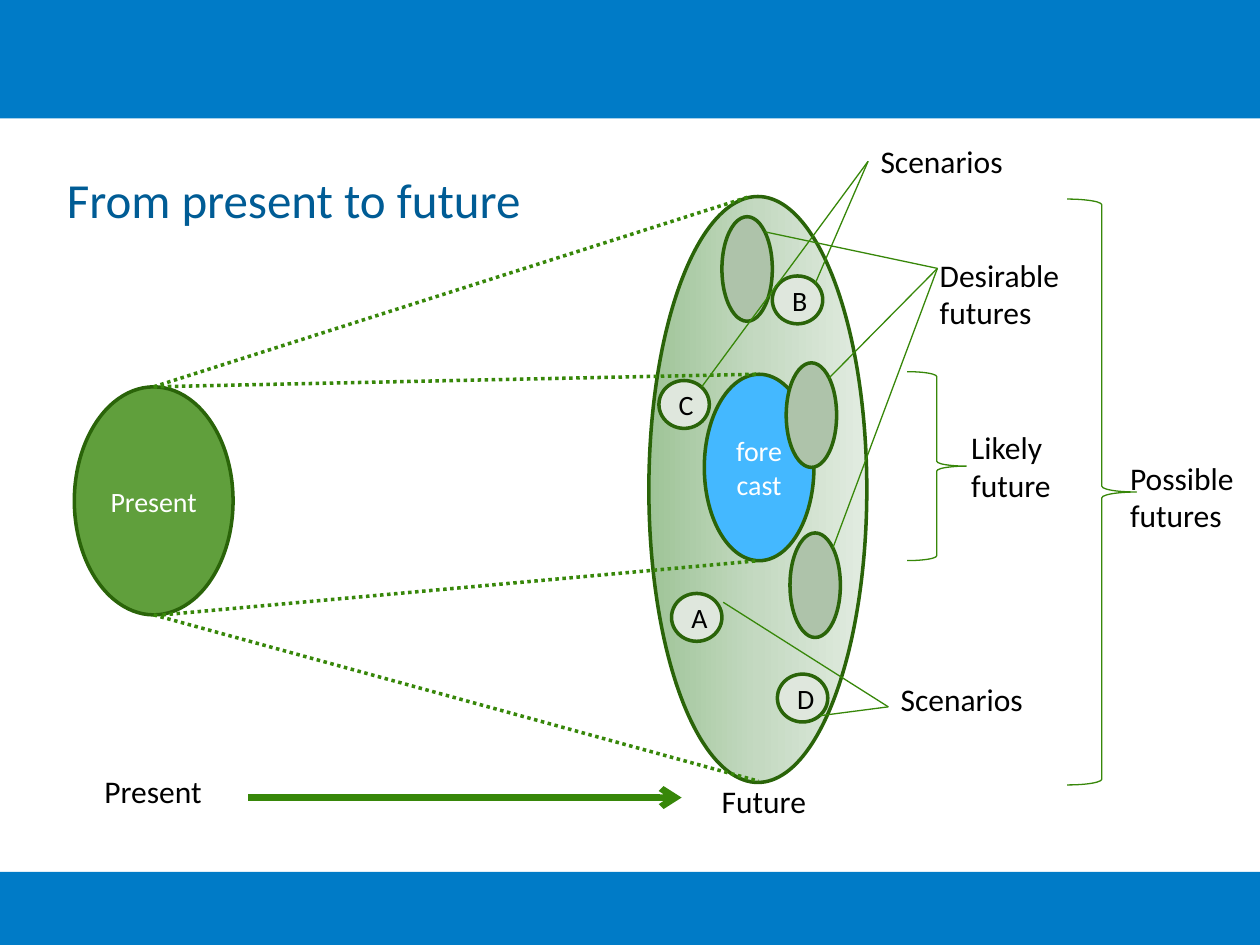
from copy import deepcopy
from dataclasses import dataclass

from lxml.etree import SubElement
from pptx import Presentation
from pptx.dml.color import RGBColor
from pptx.enum.dml import MSO_LINE
from pptx.enum.shapes import MSO_CONNECTOR, MSO_SHAPE
from pptx.enum.text import MSO_ANCHOR, PP_ALIGN
from pptx.oxml.ns import qn
from pptx.util import Inches, Pt


@dataclass(frozen=True)
class Theme:
    font: str = "Calibri"
    band: str = "007BC7"
    title: str = "005C95"
    text: str = "000000"
    white: str = "FFFFFF"
    line: str = "378709"
    outline: str = "2A6409"
    present: str = "39870C"
    forecast: str = "44B8FF"
    desirable: str = "AEC3AA"
    scenario: str = "DFE7DD"
    future: tuple = ("9EC497", "C4D9C1", "E2ECE1")
    title_size: int = 28
    label_size: int = 18
    shape_size: int = 16
    outline_width: float = 2
    thin: float = 0.75
    thick: float = 3.75


THEME = Theme()


@dataclass(frozen=True)
class Box:
    left: float
    top: float
    width: float
    height: float

    def point(self, x, y):
        return Inches(self.left + x), Inches(self.top + y)

    def area(self, x, y, width, height):
        return *self.point(x, y), Inches(width), Inches(height)


def rgb(value):
    return RGBColor.from_string(value)


def set_values(target, values):
    for name, value in values.items():
        setattr(target, name, value)


def write(frame, lines, size, color, align=PP_ALIGN.LEFT, **frame_values):
    set_values(frame, {"word_wrap": True, **frame_values})
    for index, line in enumerate(lines):
        paragraph = frame.paragraphs[0] if index == 0 else frame.add_paragraph()
        paragraph.text = line
        paragraph.alignment = align
        set_values(paragraph.font, {"name": THEME.font, "size": Pt(size)})
        paragraph.font.color.rgb = rgb(color)


def add_label(slide, area, *lines):
    write(slide.shapes.add_textbox(*area).text_frame, lines,
          THEME.label_size, THEME.text)


def add_shape(slide, kind, area, fill=None, line=None, width=THEME.outline_width):
    shape = slide.shapes.add_shape(kind, *area)
    shape.shadow.inherit = False
    if fill:
        shape.fill.solid()
        shape.fill.fore_color.rgb = rgb(fill)
    else:
        shape.fill.background()
    if line:
        shape.line.color.rgb = rgb(line)
        shape.line.width = Pt(width)
    else:
        shape.line.fill.background()
    return shape


def add_ellipse(slide, area, fill, text=None, color=THEME.text):
    ellipse = add_shape(slide, MSO_SHAPE.OVAL, area, fill, THEME.outline)
    if text:
        write(ellipse.text_frame, [text], THEME.shape_size, color,
              PP_ALIGN.CENTER, vertical_anchor=MSO_ANCHOR.MIDDLE)
    return ellipse


def add_brace(slide, area):
    add_shape(slide, MSO_SHAPE.RIGHT_BRACE, area, line=THEME.line, width=THEME.thin)


def add_line(slide, start, end, width=THEME.thin, dash=None, arrow=False):
    connector = slide.shapes.add_connector(MSO_CONNECTOR.STRAIGHT, *start, *end)
    connector.line.color.rgb = rgb(THEME.line)
    connector.line.width = Pt(width)
    if dash:
        connector.line.dash_style = dash
    properties = connector._element.spPr
    if arrow:
        SubElement(properties.find(qn("a:ln")), qn("a:tailEnd"), type="arrow")
    SubElement(properties, qn("a:effectLst"))


def add_dotted(slide, start, end):
    add_line(slide, start, end, THEME.outline_width, MSO_LINE.ROUND_DOT)


def set_gradient(shape, colors):
    shape.fill.gradient()
    shape.fill.gradient_angle = 0
    stop_list = shape._element.spPr.find(".//" + qn("a:gsLst"))
    stop_list.insert(1, deepcopy(stop_list[0]))
    for index, (stop, color) in enumerate(zip(shape.fill.gradient_stops, colors)):
        stop.position = index / (len(colors) - 1)
        stop.color.rgb = rgb(color)


def add_frame(slide, box):
    # Bands at the top and bottom, and the title
    for top, height in ((box.height - 0.58, 0.58), (0, 0.94)):
        add_shape(slide, MSO_SHAPE.RECTANGLE,
                  box.area(0, top, box.width, height), THEME.band)
    title = slide.shapes.add_textbox(*box.area(0.53, 1.32, 4.22, 0.49))
    margins = {f"margin_{side}": 0 for side in ("left", "top", "right", "bottom")}
    write(title.text_frame, ["From present to future"], THEME.title_size,
          THEME.title, vertical_anchor=MSO_ANCHOR.BOTTOM, **margins)


def add_cone(slide, box):
    # Present opening out to the whole range of futures
    present = add_ellipse(slide, box.area(0, 1.51, 1.26, 1.81),
                          THEME.present, "Present", THEME.white)
    color = present._element.spPr.find(qn("a:solidFill"))[0]
    SubElement(color, qn("a:alpha"), val="80000")
    future = add_ellipse(slide, box.area(box.width - 1.73, 0, 1.73, box.height),
                         THEME.future[0])
    set_gradient(future, THEME.future)
    add_dotted(slide, box.point(0.63, 1.51), box.point(5.36, 0))
    add_dotted(slide, box.point(0.63, 3.32), box.point(5.43, 4.64))


def add_possible(slide, box):
    add_label(slide, box.area(0.4, 2.01, 1.38, 0.91), "Possible", "futures")
    add_brace(slide, box.area(0, 0, 0.55, box.height))


def add_timeline(slide, box):
    add_label(slide, box.area(0, 0, 1.24, 0.5), "Present")
    add_label(slide, box.area(box.width - 1.1, 0.08, 1.1, 0.5), "Future")
    add_line(slide, box.point(1.24, 0.25), box.point(4.68, 0.25),
             THEME.thick, arrow=True)


def add_likely(slide, box):
    # Forecast with its inner cone and brace
    add_brace(slide, box.area(5.98, 0, 0.47, box.height))
    add_ellipse(slide, box.area(4.37, 0.02, 0.87, 1.48),
                THEME.forecast, "forecast", THEME.white)
    add_dotted(slide, box.point(0, 0.12), box.point(4.8, 0.02))
    add_dotted(slide, box.point(0.07, 1.93), box.point(4.8, box.height))
    add_label(slide, box.area(6.39, 0.4, 1.05, 0.91), "Likely", "future")


def add_desirable(slide, box):
    for x, y in ((0.51, 1.16), (0.54, 2.51), (0, 0)):
        add_ellipse(slide, box.area(x, y, 0.4, 0.83), THEME.desirable)
        add_line(slide, box.point(x + 0.34, y + 0.12), box.point(1.71, 0.41))
    add_label(slide, box.area(1.63, 0.26, 1.56, 0.91), "Desirable", "futures")


def add_scenarios(slide, box):
    circles = {"A": (0.1, 3.63), "B": (0.9, 1.11), "C": (0, 1.94), "D": (0.94, 4.27)}
    for letter, (x, y) in circles.items():
        add_ellipse(slide, box.area(x, y, 0.4, 0.38), THEME.scenario, letter)
    # Each label has two pointers that meet beside it
    for label, meeting, starts in (
        ((1.82, 4.27), (1.82, 4.53), ((0.51, 3.7), (1.28, 4.6))),
        ((1.66, 0), (1.66, 0.2), ((1.24, 1.17), (0.34, 1.99))),
    ):
        add_label(slide, box.area(*label, 1.5, 0.4), "Scenarios")
        for start in starts:
            add_line(slide, box.point(*start), box.point(*meeting))


def main():
    presentation = Presentation()
    presentation.slide_width, presentation.slide_height = Inches(10), Inches(7.5)
    slide = presentation.slides.add_slide(presentation.slide_layouts[6])
    for build, box in (
        (add_frame, Box(0, 0, 10, 7.5)),
        (add_cone, Box(0.59, 1.56, 6.29, 4.65)),
        (add_possible, Box(8.47, 1.58, 1.53, 4.65)),
        (add_timeline, Box(0.73, 6.08, 6, 0.58)),
        (add_likely, Box(1.22, 2.95, 7.44, 1.5)),
        (add_desirable, Box(5.73, 1.72, 3.19, 3.34)),
        (add_scenarios, Box(5.23, 1.08, 3.33, 4.77)),
    ):
        build(slide, box)
    presentation.save("out.pptx")


if __name__ == "__main__":
    main()
